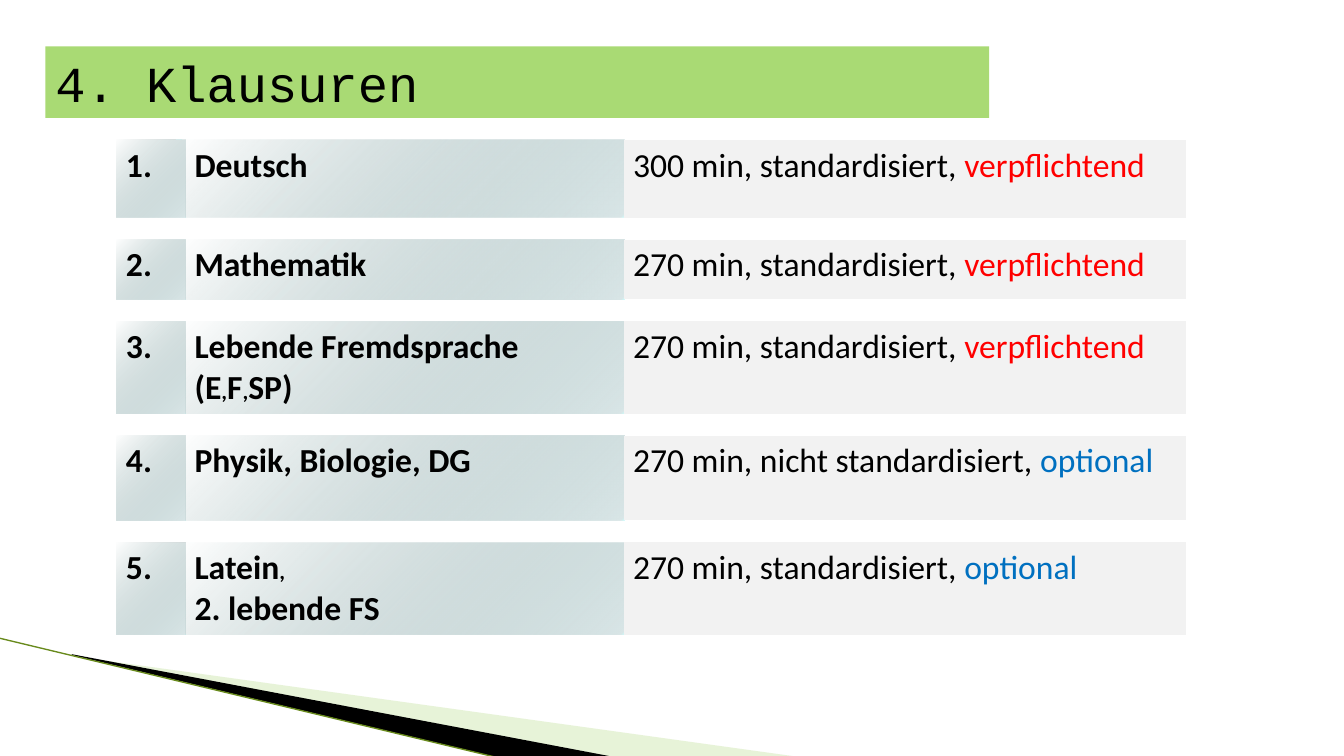
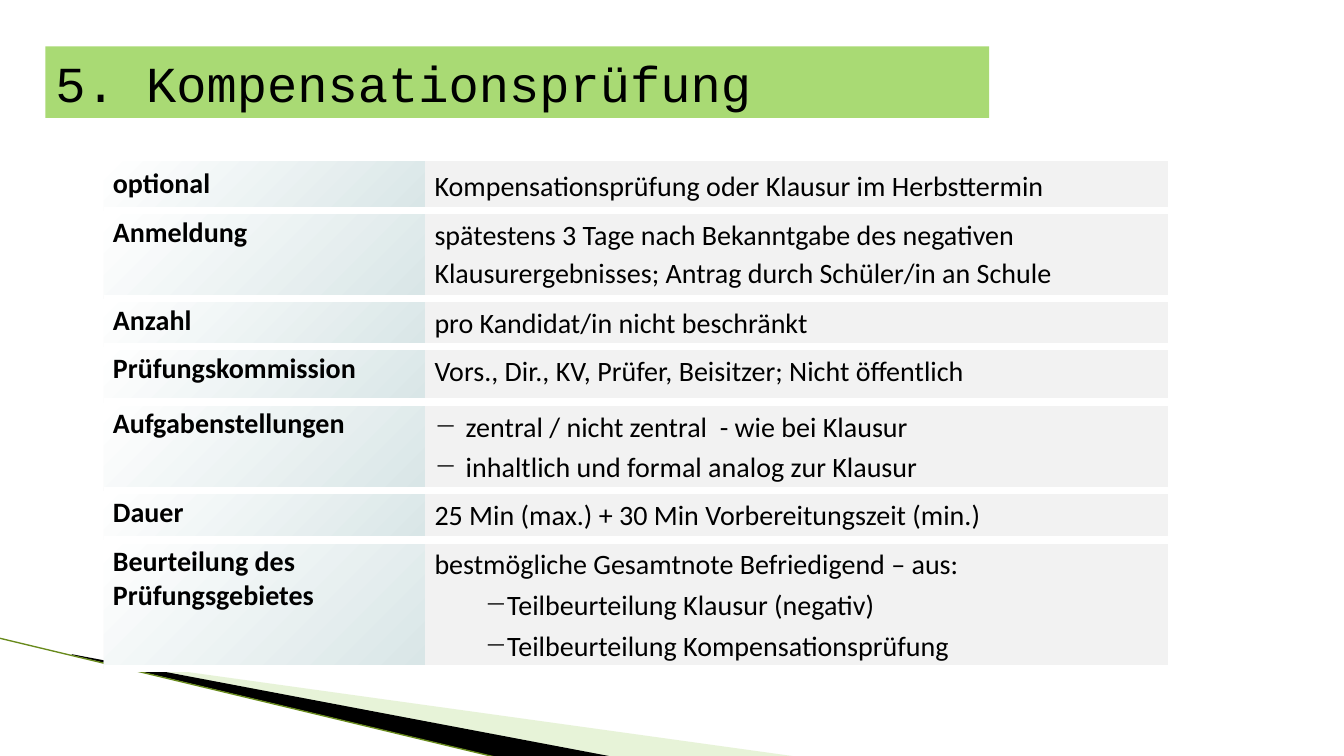
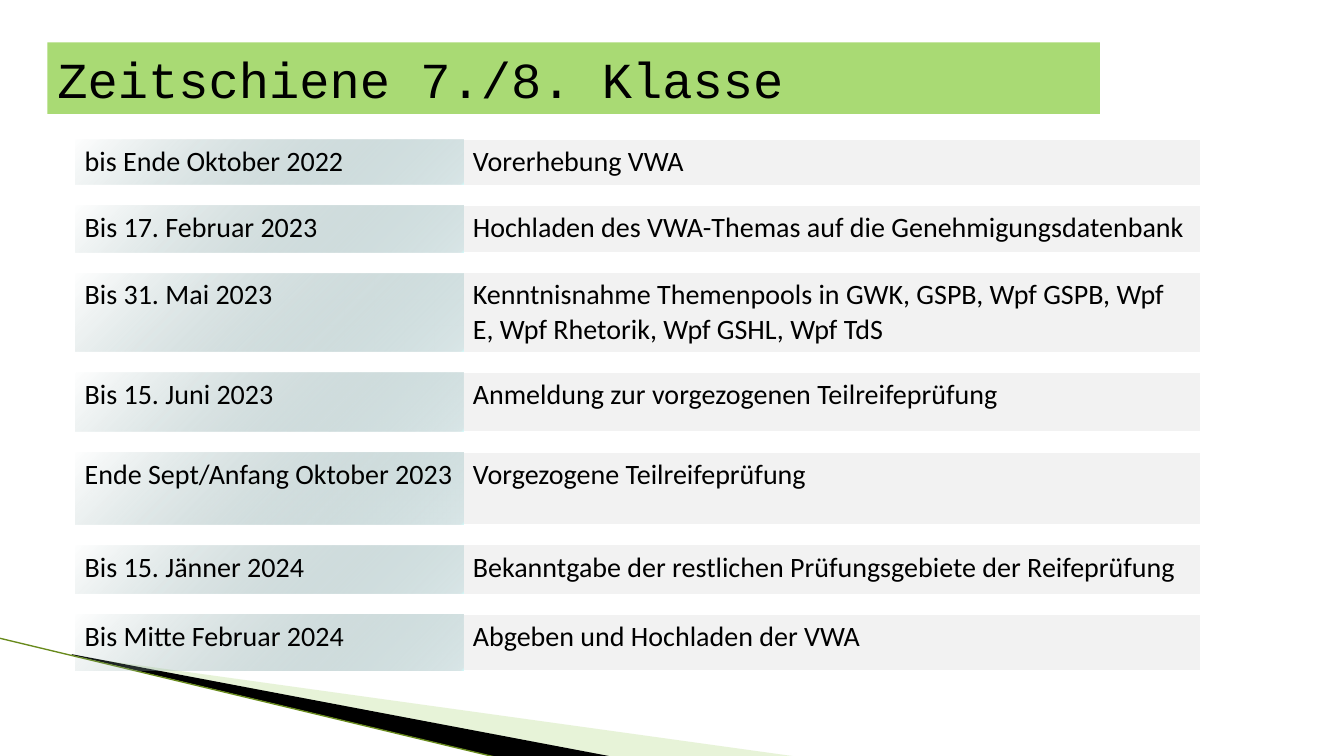
from lxml import etree
from pptx import Presentation
from pptx import util as u
from pptx.dml.color import RGBColor
from pptx.enum import shapes, text
from pptx.oxml import parse_xml
from pptx.oxml.ns import nsdecls, qn

COLOURS = {
    "ink": "000000", "red": "FF0000", "blue": "0070C0", "white": "FFFFFF",
    "band": "A9DA74", "detail": "F2F2F2", "pale": "C5E19F", "olive": "688A1C",
    "mist": "D9E6E7", "teal": "779999", "aqua": "CCFFFF",
}
GRADIENTS = {
    "fading": [(0, "teal", 0), (99, "mist", 100), (100, "aqua", 100)],
    "solid": [(0, "white", 100), (100, "mist", 100)],
}
DASHES = {"hanging": (0.31, -0.31), "inset": (0.5, 0)}


def colour(name):
    return RGBColor.from_string(COLOURS[name])


def fill_cell(cell, paragraphs, size, bold, spacing):
    frame = cell.text_frame
    for index, (runs, dash) in enumerate(paragraphs):
        para = frame.add_paragraph() if index else frame.paragraphs[0]
        para.line_spacing = spacing
        if index and spacing > 1:
            para.space_before = u.Pt(2)
        if dash:
            margin, indent = DASHES[dash]
            props = para._p.get_or_add_pPr()
            props.set("marL", str(u.Inches(margin)))
            props.set("indent", str(u.Inches(indent)))
            etree.SubElement(props, qn("a:buChar"), char="−")
        for words, ink, run_size in runs:
            span = para.add_run()
            span.text = words
            span.font.name = "Calibri"
            span.font.size = u.Pt(run_size or size)
            span.font.bold = bold
            span.font.color.rgb = colour(ink)


def plain(words, dash=None):
    return [(words, "ink", None)], dash


required = ("verpflichtend", "red", None)
optional = ("optional", "blue", None)
standard = ("270 min, standardisiert, ", "ink", None)
small_comma = (",", "ink", 16)

exams = [
    (0.77, [plain("Deutsch")], [("300 min, standardisiert, ", "ink", None), required]),
    (0.59, [plain("Mathematik")], [standard, required]),
    (0.91, [([("Lebende Fremdsprache (E", "ink", None), small_comma, ("F", "ink", None),
              small_comma, ("SP)", "ink", None)], None)], [standard, required]),
    (0.84, [plain("Physik, Biologie, DG")],
     [("270 min, nicht standardisiert, ", "ink", None), optional]),
    (0.91, [([("Latein", "ink", None), small_comma], None), plain("2. lebende FS")],
     [standard, optional]),
]
compensation = [
    (0.49, "optional", [plain("Kompensationsprüfung oder Klausur im Herbsttermin")]),
    (0.87, "Anmeldung", [plain("spätestens 3 Tage nach Bekanntgabe des negativen "
                               "Klausurergebnisses; Antrag durch Schüler/in an Schule")]),
    (0.48, "Anzahl", [plain("pro Kandidat/in nicht beschränkt")]),
    (0.55, "Prüfungskommission", [plain("Vors., Dir., KV, Prüfer, Beisitzer; Nicht öffentlich")]),
    (0.87, "Aufgabenstellungen", [plain("zentral / nicht zentral  - wie bei Klausur", "hanging"),
                                  plain("inhaltlich und formal analog zur Klausur", "hanging")]),
    (0.49, "Dauer", [plain("25 Min (max.) + 30 Min Vorbereitungszeit (min.)")]),
    (1.24, "Beurteilung des Prüfungsgebietes",
     [plain("bestmögliche Gesamtnote Befriedigend – aus:"),
      plain("Teilbeurteilung Klausur (negativ)", "inset"),
      plain("Teilbeurteilung Kompensationsprüfung", "inset")]),
]
timeline = [
    (0.44, "bis Ende Oktober 2022", "Vorerhebung VWA"),
    (0.46, "Bis 17. Februar 2023", "Hochladen des VWA-Themas auf die Genehmigungsdatenbank"),
    (0.77, "Bis 31. Mai 2023", "Kenntnisnahme Themenpools in GWK, GSPB, Wpf GSPB, Wpf E, "
                               "Wpf Rhetorik, Wpf GSHL, Wpf TdS"),
    (0.58, "Bis 15. Juni 2023", "Anmeldung zur vorgezogenen Teilreifeprüfung"),
    (0.71, "Ende Sept/Anfang Oktober 2023", "Vorgezogene Teilreifeprüfung"),
    (0.48, "Bis 15. Jänner 2024", "Bekanntgabe der restlichen Prüfungsgebiete der Reifeprüfung"),
    (0.55, "Bis Mitte Februar 2024", "Abgeben und Hochladen der VWA"),
]
pages = [
    dict(title="4. Klausuren", band=(0.45, 0.46, 9.36), at=(1.16, 1.39), columns=[0.68, 4.35, 5.57],
         gap=0.22, size=24, bold=True, spacing=1.0, gradient="fading",
         rows=[(height, [[plain(f"{number}.")], subject, [(duration, None)]])
               for number, (height, subject, duration) in enumerate(exams, 1)]),
    dict(title="5. Kompensationsprüfung", band=(0.45, 0.46, 9.36), at=(1.03, 1.6), columns=[3.19, 7.36],
         gap=0, size=20, bold=True, spacing=1.1, gradient="solid",
         rows=[(height, [[plain(label)], details]) for height, label, details in compensation]),
    dict(title="Zeitschiene 7./8. Klasse", band=(0.47, 0.42, 10.44), at=(0.75, 1.39), columns=[3.85, 7.3],
         gap=0.21, size=20, bold=False, spacing=1.0, gradient="fading",
         rows=[(height, [[plain(date)], [plain(event)]]) for height, date, event in timeline]),
]

deck = Presentation()
deck.slide_width, deck.slide_height = u.Inches(13.33), u.Inches(7.5)
layout = deck.slide_layouts[5]
slides = [deck.slides.add_slide(layout) for _ in pages]

decor = []
wedges = [
    ("pale", [(0.73, 6.51), (7.93, 7.51), (6.08, 7.51), (0.73, 6.5)]),
    ("ink", [(0.71, 6.49), (6.09, 7.51), (4.96, 7.52), (0.72, 6.5)]),
]
for fill, corners in wedges:
    points = [(u.Inches(x), u.Inches(y)) for x, y in corners]
    outline = slides[0].shapes.build_freeform(*points[0], scale=1.0)
    outline.add_line_segments(points[1:], close=True)
    wedge = outline.convert_to_shape()
    wedge.shadow.inherit = False
    wedge.fill.solid()
    wedge.fill.fore_color.rgb = colour(fill)
    wedge.line.fill.background()
    decor.append(wedge)
pale_fill = decor[0].element.spPr.find(qn("a:solidFill"))
etree.SubElement(pale_fill[0], qn("a:alpha"), val="40000")
edge = slides[0].shapes.add_connector(
    shapes.MSO_CONNECTOR.STRAIGHT, u.Inches(-0.01), u.Inches(6.33), u.Inches(4.95), u.Inches(7.52))
edge.line.color.rgb = colour("olive")
edge.line.width = u.Pt(0.95)
etree.SubElement(edge.element.spPr, qn("a:effectLst"))
decor.append(edge)
for index, shape in enumerate(decor):
    shape.element.xpath(".//p:cNvPr")[0].set("id", str(100 + index))
    layout.shapes.element.insert(2 + index, shape.element)

for slide, page in zip(slides, pages):
    title = slide.shapes.title
    left, top, width = page["band"]
    title.left, title.top, title.width, title.height = map(u.Inches, (left, top, width, 0.71))
    title.fill.solid()
    title.fill.fore_color.rgb = colour("band")
    frame = title.text_frame
    frame.auto_size = text.MSO_AUTO_SIZE.NONE
    frame.vertical_anchor = text.MSO_ANCHOR.MIDDLE
    para = frame.paragraphs[0]
    para.alignment = text.PP_ALIGN.LEFT
    span = para.add_run()
    span.text = page["title"]
    span.font.name = "Courier New"
    span.font.size = u.Pt(36)
    span.font.color.rgb = colour("ink")

    lines = []
    for row in page["rows"]:
        if lines and page["gap"]:
            lines.append((page["gap"], None))
        lines.append(row)
    columns = page["columns"]
    left, top = page["at"]
    table = slide.shapes.add_table(
        len(lines), len(columns), u.Inches(left), u.Inches(top),
        u.Inches(sum(columns)), u.Inches(sum(height for height, _ in lines))).table
    table.first_row = table.horz_banding = False
    table._tbl.tblPr.find(qn("a:tableStyleId")).text = "{2D5ABB26-0587-4C30-8999-92F81FD0307C}"
    for column, width in zip(table.columns, columns):
        column.width = u.Inches(width)

    for row, (height, contents) in zip(table.rows, lines):
        row.height = u.Inches(height)
        for index, cell in enumerate(row.cells):
            if contents is None:
                cell.margin_top = cell.margin_bottom = 0
                cell.fill.background()
                etree.SubElement(cell.text_frame.paragraphs[0]._p, qn("a:endParaRPr"), sz="600")
                continue
            last = index == len(columns) - 1
            cell.margin_left = cell.margin_right = u.Inches(0.09)
            cell.margin_top = cell.margin_bottom = u.Inches(0.05)
            fill_cell(cell, contents[index], page["size"], page["bold"] and not last,
                      page["spacing"] if last else 1.0)
            props = cell._tc.get_or_add_tcPr()
            if last:
                cell.fill.solid()
                cell.fill.fore_color.rgb = colour("detail")
            else:
                stops = "".join(
                    f'<a:gs pos="{place * 1000}"><a:srgbClr val="{COLOURS[name]}">'
                    f'<a:alpha val="{opacity * 1000}"/></a:srgbClr></a:gs>'
                    for place, name, opacity in GRADIENTS[page["gradient"]])
                props.append(parse_xml(
                    f'<a:gradFill {nsdecls("a")} rotWithShape="1"><a:gsLst>{stops}</a:gsLst>'
                    '<a:lin ang="2700000" scaled="1"/></a:gradFill>'))
            if not page["gap"]:
                props.insert(0, parse_xml(
                    f'<a:lnB {nsdecls("a")} w="{u.Pt(6)}"><a:solidFill>'
                    f'<a:srgbClr val="{COLOURS["white"]}"/></a:solidFill></a:lnB>'))

deck.save("out.pptx")
